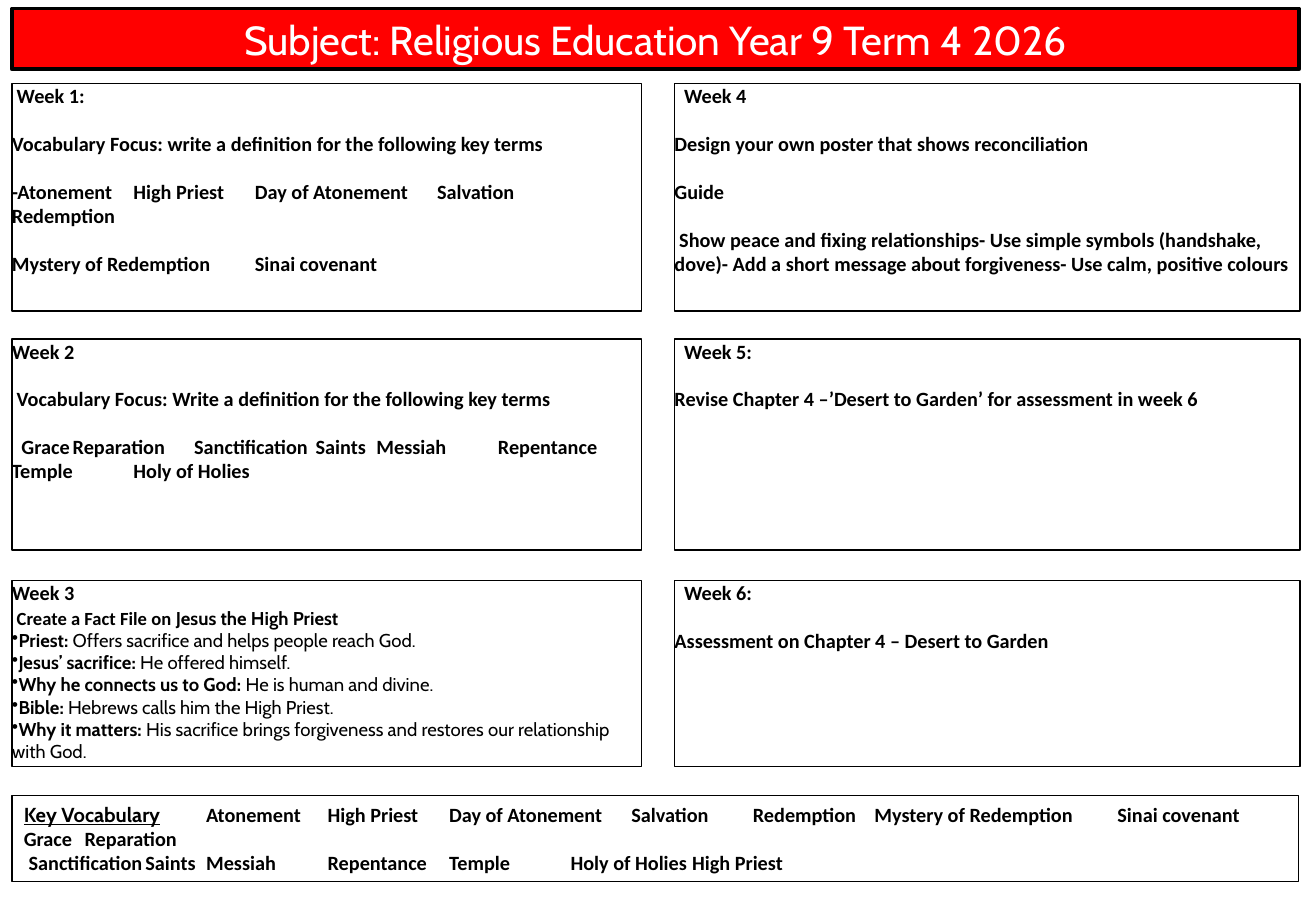
from lxml import etree
from pptx import Presentation
from pptx.dml.color import RGBColor
from pptx.enum.shapes import MSO_SHAPE
from pptx.enum.text import MSO_ANCHOR, MSO_AUTO_SIZE, PP_ALIGN
from pptx.oxml.ns import qn
from pptx.util import Cm, Pt

RECTANGLE = MSO_SHAPE.RECTANGLE
TOP = MSO_ANCHOR.TOP
NO_AUTOFIT = MSO_AUTO_SIZE.NONE
LEFT, CENTER = PP_ALIGN.LEFT, PP_ALIGN.CENTER

TITLE_ONLY = 5
BLACK, WHITE, RED = "000000", "FFFFFF", "FF0000"
SPACE = 0.1  # width of one leading space, in cm
PARAGRAPH_GAP = 13.9

HEADING = {"name": "Calibri", "size": Pt(12), "bold": True}
SMALL_HEADING = {**HEADING, "size": Pt(11)}
FACT = {"name": "Cabin", "size": Pt(11), "bold": False}
FACT_LABEL = {**FACT, "bold": True}
KEY_LABEL = {"name": "Cabin", "size": Pt(12), "bold": True, "underline": True}
TITLE = {"name": "Cabin", "size": Pt(24), "bold": False}

COLUMNS = [(0.25, 13.16), (14.1, 13.08)]  # left, width
ROWS = [(1.75, 4.75), (7.09, 4.42), (12.14, 3.89)]  # top, height
FULL_WIDTH = 26.9


def color(value):
    return RGBColor.from_string(value)


def line(text, indent=0.0, before=PARAGRAPH_GAP):
    return {"runs": [(text, HEADING)], "indent": indent, "before": before}


def term_row(terms, tabs, indent=0.0, before=PARAGRAPH_GAP):
    """A line of key terms, each after the first at its own tab stop."""
    return {**line("\t".join(terms), indent, before), "tabs": tabs}


def fact(label, text):
    return {"runs": [(label, FACT_LABEL), (" " + text, FACT)], "bullet": "•"}


def add_run(paragraph, text, formats, font_color):
    run = paragraph.add_run()
    run.text = text
    for name, value in formats.items():
        setattr(run.font, name, value)
    run.font.color.rgb = color(font_color)


def fill_paragraph(paragraph, content):
    properties = paragraph._p.get_or_add_pPr()
    properties.set("marL", "0")
    properties.set("indent", str(Cm(content.get("indent", 0))))
    if "bullet" in content:
        bullet = etree.SubElement(properties, qn("a:buChar"))
        bullet.set("char", content["bullet"])
    if "tabs" in content:
        tab_list = etree.SubElement(properties, qn("a:tabLst"))
        for position in content["tabs"]:
            tab = etree.SubElement(tab_list, qn("a:tab"))
            tab.set("pos", str(Cm(position)))
            tab.set("algn", "l")
    paragraph.alignment = LEFT
    paragraph.space_before = Pt(content.get("before", 0))
    for text, formats in content["runs"]:
        add_run(paragraph, text, formats, BLACK)


def set_frame(text_frame, side, top):
    formats = {
        "word_wrap": True, "auto_size": NO_AUTOFIT, "vertical_anchor": TOP,
        "margin_left": Cm(side), "margin_right": Cm(side),
        "margin_top": Cm(top), "margin_bottom": Cm(top),
    }
    for name, value in formats.items():
        setattr(text_frame, name, value)


def set_outline(shape, width):
    shape.line.color.rgb = color(BLACK)
    shape.line.width = Pt(width)


def add_box(slide, bounds, contents, outline=1.0, side=0.0, top=0.0):
    shape = slide.shapes.add_shape(RECTANGLE, *map(Cm, bounds))
    shape.shadow.inherit = False
    shape.fill.background()
    set_outline(shape, outline)
    set_frame(shape.text_frame, side, top)
    for index, content in enumerate(contents):
        if index == 0:
            paragraph = shape.text_frame.paragraphs[0]
            content = {**content, "before": 0}
        else:
            paragraph = shape.text_frame.add_paragraph()
        fill_paragraph(paragraph, content)


def format_title(slide, text):
    title = slide.shapes.title
    bounds = {"left": 0.25, "top": 0.18, "width": FULL_WIDTH, "height": 1.27}
    for name, value in bounds.items():
        setattr(title, name, Cm(value))
    title.fill.solid()
    title.fill.fore_color.rgb = color(RED)
    set_outline(title, 2.25)
    set_frame(title.text_frame, 0.25, 0.13)
    paragraph = title.text_frame.paragraphs[0]
    paragraph.alignment = CENTER
    add_run(paragraph, text, TITLE, WHITE)


# Weeks 1 to 3 go down the left column, weeks 4 to 6 down the right one.
WEEKS = [
    [
        line("Week 1:", SPACE),
        line("Vocabulary Focus: write a definition for the following key terms"),
        term_row(["-Atonement", "High Priest", "Day of Atonement", "Salvation",
                  "Redemption"], [2.49, 4.66, 8.15, 10.16]),
        term_row(["Mystery of Redemption", "Sinai covenant"], [4.35]),
    ],
    [
        line("Week 2"),
        line("Vocabulary Focus: Write a definition for the following key terms",
             SPACE),
        term_row(["Grace", "Reparation", "Sanctification", "Saints", "Messiah",
                  "Repentance"], [1.69, 3.99, 6.65, 7.9, 9.64], 2 * SPACE),
        term_row(["Temple", "Holy of Holies"], [1.57], before=0),
    ],
    [
        line("Week 3"),
        {"runs": [("Create a Fact File on ", SMALL_HEADING),
                  ("Jesus the High Priest", FACT_LABEL)],
         "indent": SPACE, "before": 1},
        fact("Priest:", "Offers sacrifice and helps people reach God."),
        fact("Jesus’ sacrifice:", "He offered himself."),
        fact("Why he connects us to God:", "He is human and divine."),
        fact("Bible:", "Hebrews calls him the High Priest."),
        fact("Why it matters:", "His sacrifice brings forgiveness and restores "
             "our relationship with God."),
    ],
    [
        line("Week 4", 2 * SPACE),
        line("Design your own poster that shows reconciliation"),
        line("Guide"),
        line("Show peace and fixing relationships- Use simple symbols "
             "(handshake, dove)- Add a short message about forgiveness- "
             "Use calm, positive colours", SPACE),
    ],
    [
        line("Week 5:", 2 * SPACE),
        line("Revise Chapter 4 –’Desert to Garden’ for assessment in week 6"),
    ],
    [
        line("Week 6:", 2 * SPACE),
        line("Assessment on Chapter 4 – Desert to Garden"),
    ],
]

KEY_TERMS = ["Atonement", "High Priest", "Day of Atonement", "Salvation",
             "Redemption", "Mystery of Redemption", "Sinai covenant", "Grace",
             "Reparation"]
KEY_VOCABULARY = [
    {"runs": [("Key Vocabulary\t", KEY_LABEL), ("\t".join(KEY_TERMS), HEADING)],
     "tabs": [3.14, 5.5, 7.69, 11.16, 13.15, 15.8, 20.13, 22.97, 24.27]},
    term_row(["Sanctification", "Saints", "Messiah", "Repentance", "Temple",
              "Holy of Holies", "High Priest"],
             [2.76, 4.1, 5.94, 8.3, 9.87, 12.56], SPACE, before=0),
]


def main():
    presentation = Presentation()
    presentation.slide_width = Cm(27.51)
    presentation.slide_height = Cm(19.05)
    layout = presentation.slide_layouts[TITLE_ONLY]
    slide = presentation.slides.add_slide(layout)

    format_title(slide, "Subject: Religious Education Year 9 Term 4 2026")
    for index, contents in enumerate(WEEKS):
        column, row = divmod(index, len(ROWS))
        left, width = COLUMNS[column]
        top, height = ROWS[row]
        add_box(slide, (left, top, width, height), contents)
    add_box(slide, (0.25, 16.64, FULL_WIDTH, 1.8), KEY_VOCABULARY,
            outline=0.75, side=0.25, top=0.13)

    presentation.save("out.pptx")


if __name__ == "__main__":
    main()
